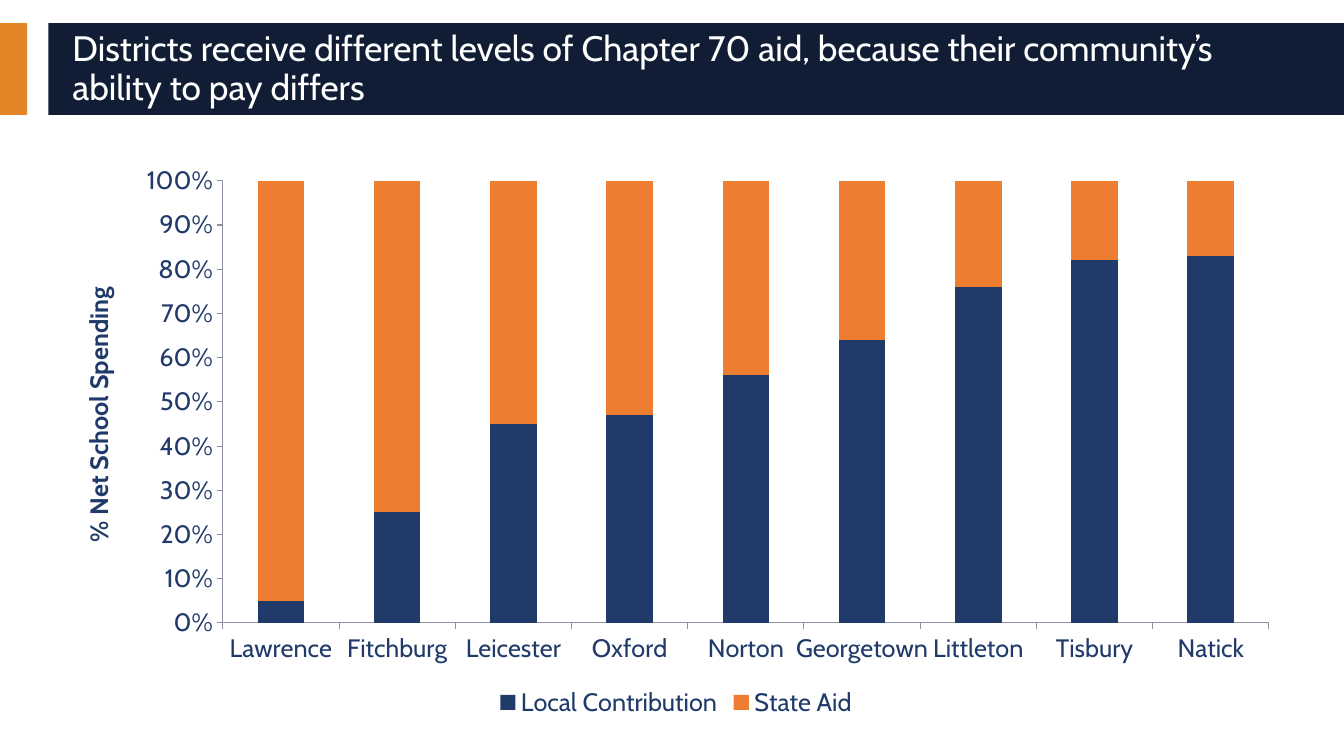
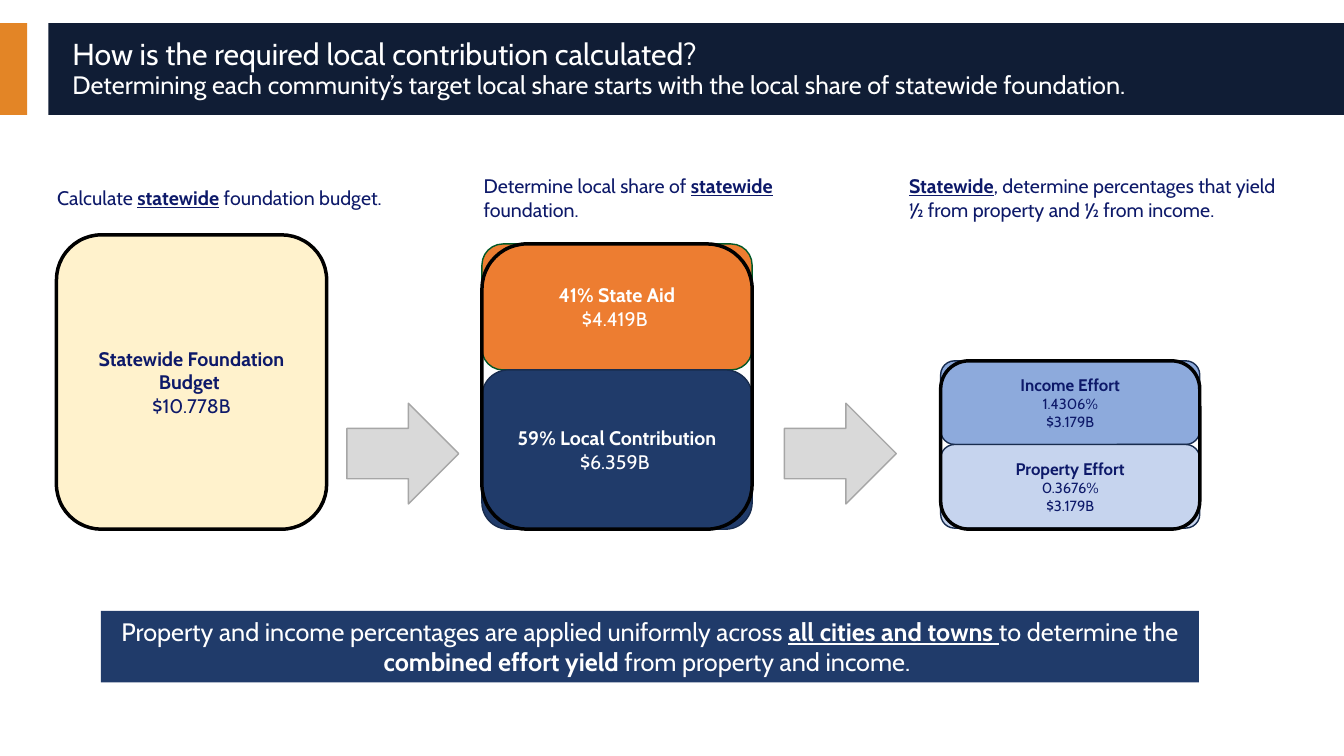
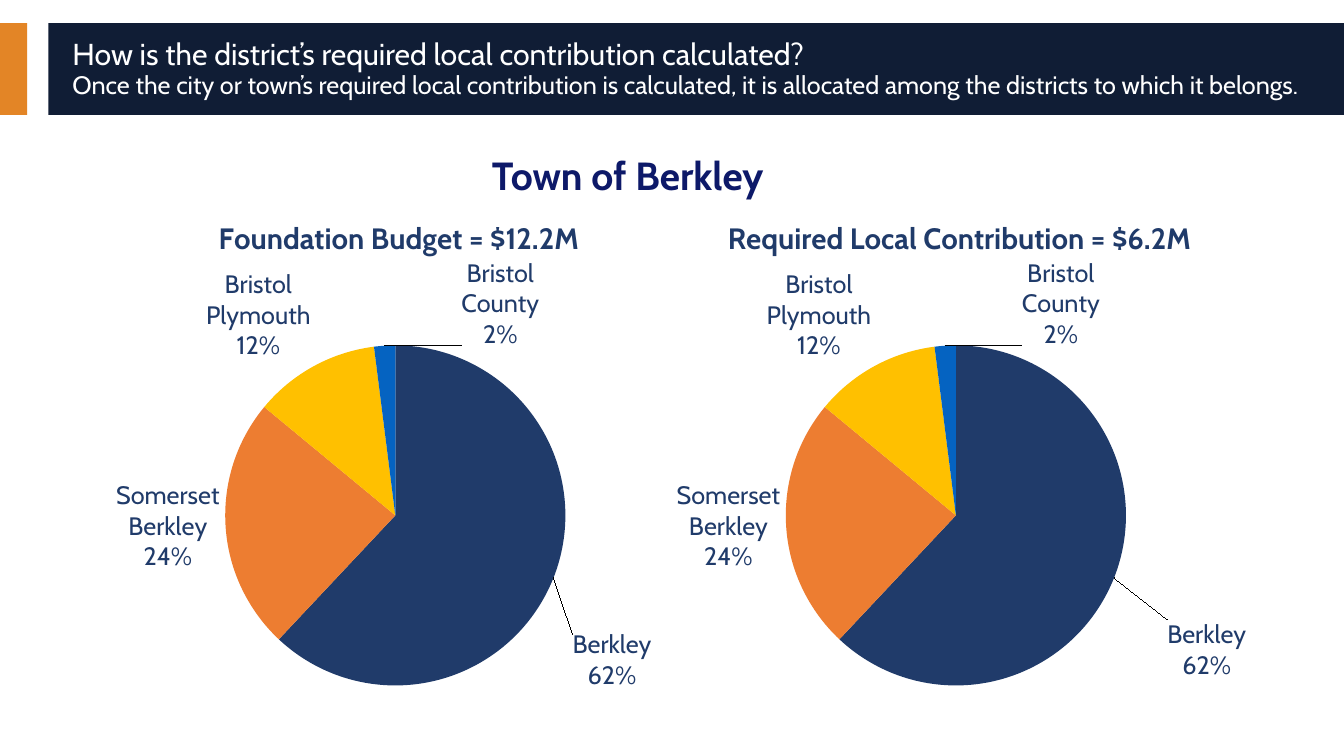
from copy import deepcopy

from pptx import Presentation
from pptx.chart.data import CategoryChartData
from pptx.dml.color import RGBColor
from pptx.enum.chart import XL_CHART_TYPE, XL_LABEL_POSITION, XL_LEGEND_POSITION, XL_TICK_MARK
from pptx.enum.shapes import MSO_SHAPE
from pptx.enum.text import MSO_ANCHOR, PP_ALIGN
from pptx.oxml import parse_xml
from pptx.oxml.ns import nsdecls, qn
from pptx.util import Inches, Pt

STACKED_COLUMNS = XL_CHART_TYPE.COLUMN_STACKED_100
PIE = XL_CHART_TYPE.PIE
OUTSIDE_END = XL_LABEL_POSITION.OUTSIDE_END
LEGEND_BOTTOM = XL_LEGEND_POSITION.BOTTOM
TICK_OUTSIDE = XL_TICK_MARK.OUTSIDE
RECTANGLE = MSO_SHAPE.RECTANGLE
ROUNDED = MSO_SHAPE.ROUNDED_RECTANGLE
RIGHT_ARROW = MSO_SHAPE.RIGHT_ARROW
MIDDLE = MSO_ANCHOR.MIDDLE
TOP = MSO_ANCHOR.TOP
LEFT = PP_ALIGN.LEFT
CENTER = PP_ALIGN.CENTER

FONT = "Cabin"
WHITE = RGBColor(0xFF, 0xFF, 0xFF)
BLACK = RGBColor(0x00, 0x00, 0x00)
BAND_NAVY = RGBColor(0x10, 0x1D, 0x35)
ACCENT_ORANGE = RGBColor(0xE3, 0x85, 0x26)
NAVY = RGBColor(0x20, 0x3B, 0x6A)
DARK_NAVY = RGBColor(0x18, 0x2C, 0x4E)
INK = RGBColor(0x0D, 0x19, 0x69)
ORANGE = RGBColor(0xED, 0x7D, 0x31)
GREEN = RGBColor(0x00, 0x58, 0x28)
GOLD = RGBColor(0xFF, 0xC0, 0x00)
BLUE = RGBColor(0x05, 0x63, 0xC1)
CREAM = RGBColor(0xFF, 0xF2, 0xCC)
MID_BLUE = RGBColor(0x8D, 0xAA, 0xDC)
PALE_BLUE = RGBColor(0xC6, 0xD4, 0xEE)
LIGHT_GRAY = RGBColor(0xD9, 0xD9, 0xD9)
GRAY = RGBColor(0xA6, 0xA6, 0xA6)
AXIS_GRAY = RGBColor(0x90, 0x90, 0xA5)

STRONG = {"bold": True}
KEY = {"bold": True, "underline": True}


def format_font(font, size=18, color=INK, bold=False, underline=False):
    """Apply the deck's typeface and the given look to a font."""
    font.name = FONT
    font.size = Pt(size)
    font.color.rgb = color
    font.bold = bold
    font.underline = underline


def write_text(frame, paragraphs, align=LEFT, anchor=MIDDLE, line_spacing=None, **look):
    """Fill a text frame; each paragraph is a list of (text, look) runs, and a None run breaks the line."""
    frame.word_wrap = True
    frame.vertical_anchor = anchor
    for index, runs in enumerate(paragraphs):
        paragraph = frame.add_paragraph() if index else frame.paragraphs[0]
        paragraph.alignment = align
        if line_spacing:
            paragraph.line_spacing = line_spacing
        for piece in runs:
            if piece is None:
                paragraph.add_line_break()
                continue
            text, changes = piece
            run = paragraph.add_run()
            run.text = text
            format_font(run.font, **{**look, **changes})


def add_box(slide, kind, box, fill=None, line=None, line_width=1):
    """Add a preset shape without shadow at box (left, top, width, height)."""
    shape = slide.shapes.add_shape(kind, *map(Inches, box))
    shape.shadow.inherit = False
    if fill is None:
        shape.fill.background()
    else:
        shape.fill.solid()
        shape.fill.fore_color.rgb = fill
    if line is None:
        shape.line.fill.background()
    else:
        shape.line.color.rgb = line
        shape.line.width = Pt(line_width)
    return shape


def add_text(slide, box, paragraphs, **look):
    """Add a text box at box."""
    text_box = slide.shapes.add_textbox(*map(Inches, box))
    write_text(text_box.text_frame, paragraphs, **look)


def add_titled_slide(presentation, title_runs, size):
    """Add a blank slide with the accent block, the title band and its title."""
    slide = presentation.slides.add_slide(presentation.slide_layouts[6])
    add_box(slide, RECTANGLE, (0, 0.23, 0.27, 0.91), fill=ACCENT_ORANGE)
    add_box(slide, RECTANGLE, (0.48, 0.23, 12.86, 0.91), fill=BAND_NAVY)
    add_text(slide, (0.62, 0.32, 12.44, 0.74), [title_runs],
             size=size, color=WHITE, line_spacing=0.9)
    return slide


def add_question_slide(presentation, question, answer):
    """Add a titled slide with a question over a smaller answer."""
    return add_titled_slide(presentation, [(question, {}), None, (answer, {"size": 18})], 21.6)


def add_chart(slide, kind, box, categories, series, number_format="General"):
    """Add a chart at box and give it the deck's font."""
    data = CategoryChartData(number_format=number_format)
    data.categories = categories
    for name, values in series:
        data.add_series(name, values)
    chart = slide.shapes.add_chart(kind, *map(Inches, box), data).chart
    format_font(chart.font, color=NAVY)
    return chart


def fill_solid(part, color):
    """Fill a chart series or point with one colour."""
    part.format.fill.solid()
    part.format.fill.fore_color.rgb = color


def add_spending_chart(slide, box):
    """Draw local contribution against state aid by district."""
    districts = ["Lawrence", "Fitchburg", "Leicester", "Oxford", "Norton",
                 "Georgetown", "Littleton", "Tisbury", "Natick"]
    local = [5, 25, 45, 47, 56, 64, 76, 82, 83]
    aid = [100 - share for share in local]
    chart = add_chart(slide, STACKED_COLUMNS, box, districts,
                      [("Local Contribution", local), ("State Aid", aid)])
    chart.has_title = False
    chart.has_legend = True
    chart.legend.position = LEGEND_BOTTOM
    chart.legend.include_in_layout = False
    plot = chart.plots[0]
    plot.gap_width = 150
    plot.overlap = 100
    plot.vary_by_categories = False
    for series, color in zip(plot.series, (NAVY, ORANGE)):
        fill_solid(series, color)
    for axis in (chart.category_axis, chart.value_axis):
        axis.has_major_gridlines = False
        axis.major_tick_mark = TICK_OUTSIDE
        axis.format.line.color.rgb = AXIS_GRAY
    chart.value_axis.tick_labels.number_format = "0%"
    chart.value_axis.tick_labels.number_format_is_linked = False
    axis_title = chart.value_axis.axis_title
    write_text(axis_title.text_frame, [[("% Net School Spending", STRONG)]],
               align=CENTER, color=NAVY)
    axis_title._element.xpath(".//a:bodyPr")[0].set("rot", "-5400000")


def manual_layout(x, y, extra=""):
    """Return a chart layout element with the given fractions."""
    return parse_xml(f'<c:layout {nsdecls("c")}><c:manualLayout>{extra and "<c:layoutTarget val=%r/>" % "inner"}'
                     f'{extra and "<c:xMode val=%r/><c:yMode val=%r/>" % ("edge", "edge")}'
                     f'<c:x val="{x}"/><c:y val="{y}"/>{extra}</c:manualLayout></c:layout>')


def label_slices(series, shifts):
    """Label slices with name and share, moving some by fractions of the chart."""
    labels = series.data_labels
    labels.show_value = False
    labels.show_category_name = True
    labels.show_percentage = True
    labels.number_format = "0%"
    labels.number_format_is_linked = False
    labels.position = OUTSIDE_END
    element = labels._element
    separator = parse_xml(f'<c:separator {nsdecls("c")}>\n</c:separator>')
    element.find(qn("c:showBubbleSize")).addnext(separator)
    shared = [child for child in element if child.tag != qn("c:showLeaderLines")]
    for position, (index, shift) in enumerate(shifts.items()):
        label = parse_xml(f'<c:dLbl {nsdecls("c")}><c:idx val="{index}"/></c:dLbl>')
        label.append(manual_layout(*shift))
        label.extend(deepcopy(child) for child in shared)
        element.insert(position, label)


def add_share_pie(slide, box, title, berkley_shift):
    """Draw one pie of district shares under its title."""
    districts = ["Berkley", "Somerset Berkley", "Bristol Plymouth", "Bristol County"]
    chart = add_chart(slide, PIE, box, districts, [(title, [62, 24, 12, 2])])
    chart.has_legend = False
    chart.has_title = True
    write_text(chart.chart_title.text_frame, [[(title, STRONG)]],
               align=CENTER, size=21, color=NAVY)
    chart.plots[0].vary_by_categories = True
    series = chart.plots[0].series[0]
    for index, color in enumerate((NAVY, ORANGE, GOLD, BLUE)):
        fill_solid(series.points[index], color)
    label_slices(series, {0: berkley_shift, 3: (0.17, 0.02)})
    plot_area = chart._chartSpace.chart.plotArea
    for layout in plot_area.findall(qn("c:layout")):
        plot_area.remove(layout)
    plot_area.insert(0, manual_layout(0.22, 0.3, '<c:w val="0.55"/><c:h val="0.69"/>'))


def add_stack(slide, box, parts, size, detail_size):
    """Stack rounded parts (height, fill, line, text colour, lines) in a heavy outline."""
    left, top, width, height = box
    for part_height, fill, line, color, (heading, *details) in parts:
        shape = add_box(slide, ROUNDED, (left, top, width, part_height), fill, line)
        paragraphs = [[(heading, STRONG)]]
        paragraphs += [[(detail, {"size": detail_size})] for detail in details]
        write_text(shape.text_frame, paragraphs, align=CENTER, size=size, color=color)
        top += part_height
    add_box(slide, ROUNDED, box, line=BLACK, line_width=2.5)


def add_step_caption(slide, left, width, runs):
    """Write the caption above one step."""
    shape = add_box(slide, ROUNDED, (left, 1.67, width, 0.58))
    write_text(shape.text_frame, [runs], size=14)


def add_flow(slide):
    """Draw the three steps from statewide budget to effort, with arrows between."""
    add_step_caption(slide, 0.44, 3.89, [
        ("Calculate ", {}), ("statewide", KEY), (" foundation budget.", {})])
    add_step_caption(slide, 4.67, 3.89, [
        ("Determine local share of ", {}), ("statewide", KEY), (" foundation.", {})])
    add_step_caption(slide, 8.89, 4, [
        ("Statewide", KEY),
        (", determine percentages that yield ½ from property and ½ from income.", {})])
    add_stack(slide, (0.56, 2.33, 2.68, 2.92), [
        (2.92, CREAM, BLACK, INK, ("Statewide Foundation Budget ", "$10.778B"))], 14, 14)
    add_stack(slide, (4.78, 2.42, 2.68, 2.83), [
        (1.25, ORANGE, GREEN, WHITE, ("41% State Aid", "$4.419B ")),
        (1.58, NAVY, DARK_NAVY, WHITE, ("59% Local Contribution", "$6.359B "))], 14, 14)
    add_stack(slide, (9.33, 3.58, 2.57, 1.67), [
        (0.83, MID_BLUE, DARK_NAVY, INK, ("Income Effort", "1.4306%", "$3.179B")),
        (0.83, PALE_BLUE, DARK_NAVY, INK, ("Property Effort", "0.3676%", "$3.179B"))], 12, 10.5)
    for left in (3.44, 7.78):
        add_box(slide, RIGHT_ARROW, (left, 4, 1.11, 1), LIGHT_GRAY, GRAY)


def add_conclusion(slide, box):
    """Write the closing statement in a navy bar."""
    shape = add_box(slide, RECTANGLE, box, fill=NAVY)
    write_text(shape.text_frame, [[
        ("Property and income percentages are applied uniformly across ", {}),
        ("all cities and towns ", KEY), ("to determine the ", {}),
        ("combined effort yield ", STRONG), ("from property and income. ", {})]],
        align=CENTER, color=WHITE)


def build_aid_slide(presentation):
    """Build the slide comparing districts."""
    slide = add_titled_slide(presentation, [(
        "Districts receive different levels of Chapter 70 aid, "
        "because their community’s ability to pay differs", {})], 25.2)
    add_spending_chart(slide, (0.58, 1.53, 12.25, 5.64))


def build_calculation_slide(presentation):
    """Build the slide on the statewide calculation."""
    slide = add_question_slide(
        presentation, "How is the required local contribution calculated? ",
        "Determining each community’s target local share starts with "
        "the local share of statewide foundation.")
    add_flow(slide)
    add_conclusion(slide, (1, 6.06, 10.89, 0.71))


def build_town_slide(presentation):
    """Build the slide allocating one town's contribution."""
    slide = add_question_slide(
        presentation, "How is the district’s required local contribution calculated? ",
        "Once the city or town’s required local contribution is calculated, "
        "it is allocated among the districts to which it belongs.")
    add_text(slide, (2.67, 1.45, 7.11, 0.57), [[("Town of Berkley", STRONG)]],
             align=CENTER, anchor=TOP, size=28)
    pies = [(0.57, "Foundation Budget = $12.2M", (0.02, 0.11)),
            (6.13, "Required Local Contribution = $6.2M", (0.07, 0.08))]
    for left, title, berkley_shift in pies:
        add_share_pie(slide, (left, 1.96, 6.77, 4.89), title, berkley_shift)


def main():
    """Build and save the presentation."""
    presentation = Presentation()
    presentation.slide_width = Inches(13.33)
    presentation.slide_height = Inches(7.5)
    build_aid_slide(presentation)
    build_calculation_slide(presentation)
    build_town_slide(presentation)
    presentation.save("out.pptx")


if __name__ == "__main__":
    main()
